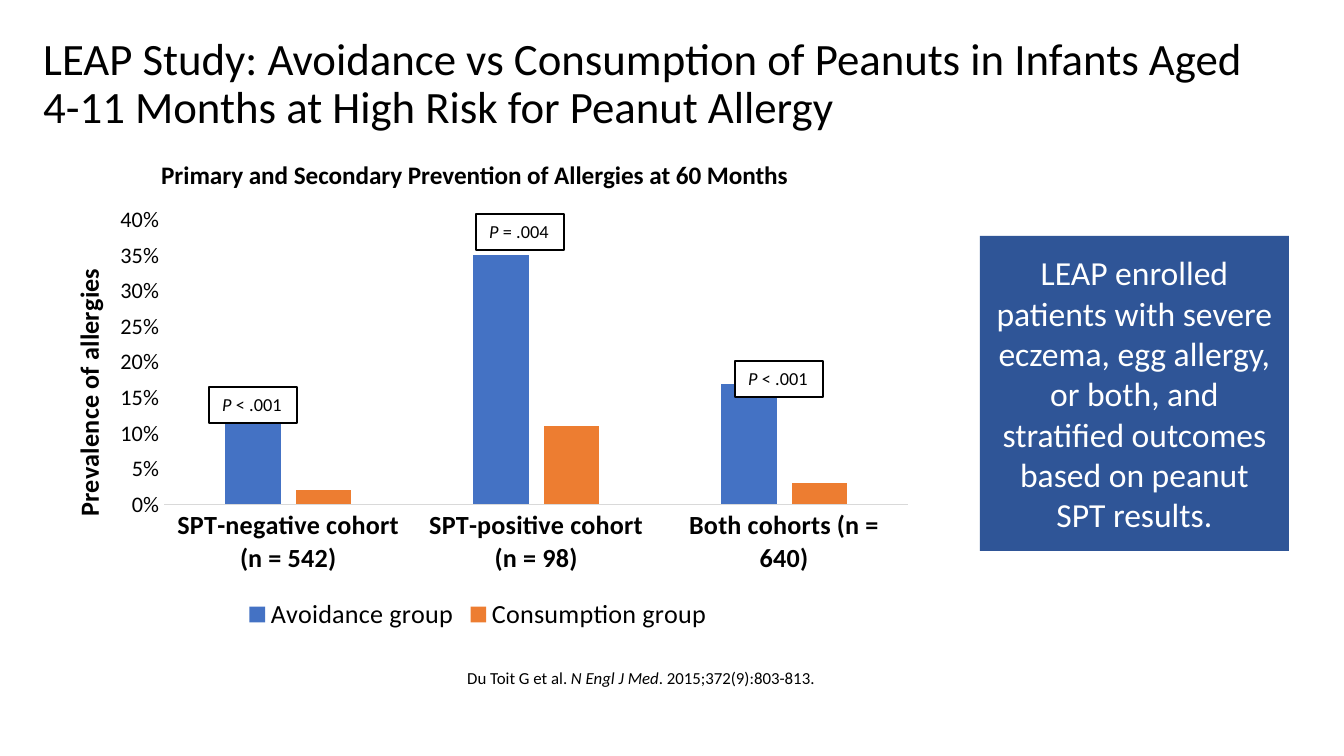
from lxml import etree
from pptx import Presentation
from pptx.chart.data import CategoryChartData
from pptx.dml.color import RGBColor
from pptx.enum.chart import XL_CHART_TYPE, XL_LEGEND_POSITION, XL_TICK_MARK
from pptx.enum.shapes import MSO_SHAPE
from pptx.enum.text import MSO_ANCHOR, PP_ALIGN
from pptx.oxml.ns import qn
from pptx.util import Pt

COLUMNS = XL_CHART_TYPE.COLUMN_CLUSTERED
LEGEND_BOTTOM = XL_LEGEND_POSITION.BOTTOM
NO_TICKS = XL_TICK_MARK.NONE
RECTANGLE = MSO_SHAPE.RECTANGLE
TOP, MIDDLE = MSO_ANCHOR.TOP, MSO_ANCHOR.MIDDLE
LEFT, CENTER = PP_ALIGN.LEFT, PP_ALIGN.CENTER

EMU_PER_PX = 914400 / 134.4
BLACK, WHITE, NAVY, GRAY = "000000", "FFFFFF", "2F5597", "D9D9D9"


def px(*lengths):
    return [round(length * EMU_PER_PX) for length in lengths]


def color(value):
    return RGBColor.from_string(value)


def style_font(font, size, ink=BLACK, bold=False, italic=False):
    font.name = "Calibri"
    font.size = Pt(size)
    font.bold = bold
    font.italic = italic
    font.color.rgb = color(ink)


def write(frame, text, size, ink=BLACK, bold=False, align=LEFT,
          anchor=TOP, wrap=True, spacing=1.0):
    """Fill a text frame; parts between asterisks are italic."""
    frame.word_wrap = wrap
    frame.vertical_anchor = anchor
    paragraph = frame.paragraphs[0]
    paragraph.alignment = align
    paragraph.line_spacing = spacing
    for index, part in enumerate(text.split("*")):
        for line_number, line in enumerate(part.split("\n")):
            if line_number:
                paragraph.add_line_break()
            if line:
                run = paragraph.add_run()
                run.text = line
                style_font(run.font, size, ink, bold, italic=index % 2 == 1)


def place(element, inner=False, **fractions):
    """Give a chart part a manual layout in fractions of the chart."""
    layout = element.find(qn("c:layout"))
    if layout is None:
        layout = etree.Element(qn("c:layout"))
        text = element.find(qn("c:tx"))
        element.insert(0 if text is None else element.index(text) + 1, layout)
    for child in list(layout):
        layout.remove(child)
    manual = etree.SubElement(layout, qn("c:manualLayout"))
    settings = {"layoutTarget": "inner"} if inner else {}
    settings.update(xMode="edge", yMode="edge", **fractions)
    for name, value in settings.items():
        etree.SubElement(manual, qn(f"c:{name}")).set("val", str(value))


class SlideBuilder:
    def __init__(self, presentation):
        self.slide = presentation.slides.add_slide(presentation.slide_layouts[6])

    def text(self, box, text, size, **format):
        shape = self.slide.shapes.add_textbox(*px(*box))
        write(shape.text_frame, text, size, **format)

    def rectangle(self, box, text, size, fill, line=None, **format):
        shape = self.slide.shapes.add_shape(RECTANGLE, *px(*box))
        shape.shadow.inherit = False
        shape.fill.solid()
        shape.fill.fore_color.rgb = color(fill)
        if line:
            shape.line.color.rgb = color(line)
            shape.line.width = Pt(0.75)
        else:
            shape.line.fill.background()
        write(shape.text_frame, text, size, **format)

    def column_chart(self, box, categories, series, axis_title):
        data = CategoryChartData(number_format="0%")
        data.categories = categories
        for name, values, _ in series:
            data.add_series(name, values)
        chart = self.slide.shapes.add_chart(COLUMNS, *px(*box), data).chart
        style_font(chart.font, 10)
        chart.has_title = False

        # Columns
        plot = chart.plots[0]
        plot.gap_width, plot.overlap = 219, -27
        plot.vary_by_categories = False
        for columns, (_, _, fill) in zip(plot.series, series):
            columns.format.fill.solid()
            columns.format.fill.fore_color.rgb = color(fill)
        plot_area = chart._chartSpace.chart.plotArea
        place(plot_area, inner=True, x=0.15, y=0.05, w=0.83, h=0.65)

        # Axes
        category_axis, value_axis = chart.category_axis, chart.value_axis
        for axis in (category_axis, value_axis):
            axis.has_major_gridlines = False
            axis.major_tick_mark = axis.minor_tick_mark = NO_TICKS
        style_font(category_axis.tick_labels.font, 14, bold=True)
        category_axis.format.line.color.rgb = color(GRAY)
        category_axis.format.line.width = Pt(0.75)
        style_font(value_axis.tick_labels.font, 11.9)
        value_axis.format.line.fill.background()
        value_axis.minimum_scale, value_axis.maximum_scale = 0, 0.4
        value_axis.major_unit = 0.05
        value_axis.tick_labels.number_format = "0%"
        value_axis.tick_labels.number_format_is_linked = False
        title = value_axis.axis_title
        run = title.text_frame.paragraphs[0].add_run()
        run.text = axis_title
        style_font(run.font, 14, bold=True)
        place(title._element, x=0.04, y=0.15)

        # Legend
        chart.has_legend = True
        chart.legend.position = LEGEND_BOTTOM
        chart.legend.include_in_layout = False
        style_font(chart.legend.font, 14)


def main():
    presentation = Presentation()
    presentation.slide_width, presentation.slide_height = px(1344, 756)
    builder = SlideBuilder(presentation)

    # Title and citation
    builder.text((30, 12, 1298, 146),
                 "LEAP Study: Avoidance vs Consumption of Peanuts in Infants Aged\n"
                 "4-11 Months at High Risk for Peanut Allergy",
                 24, anchor=MIDDLE, spacing=0.9)
    builder.text((454, 663, 890, 81),
                 "Du Toit G et al. *N Engl J Med*. 2015;372(9):803-813.",
                 9, spacing=0.9)

    # Chart with its heading
    builder.column_chart(
        (30, 198, 896, 438),
        ["SPT-negative cohort (n = 542)",
         "SPT-positive cohort (n = 98)",
         "Both cohorts (n = 640)"],
        [("Avoidance group", (0.14, 0.35, 0.17), "4472C4"),
         ("Consumption group", (0.02, 0.11, 0.03), "ED7D31")],
        "Prevalence of allergies")
    builder.text((148, 153, 661, 44),
                 "Primary and Secondary Prevention of Allergies at 60 Months",
                 13.5, bold=True, wrap=False)

    # P values above the columns
    for left, top, label in ((209, 387, "*P* < .001"),
                             (476, 214, "*P* = .004"),
                             (735, 361, "*P* < .001")):
        builder.rectangle((left, top, 88, 36), label, 9.8, WHITE,
                          line=BLACK, wrap=False)

    # Summary panel
    builder.rectangle((980, 236, 309, 315),
                      "LEAP enrolled patients with severe eczema, egg allergy, "
                      "or both, and stratified outcomes based on peanut SPT results.",
                      18, NAVY, ink=WHITE, align=CENTER, anchor=MIDDLE)

    presentation.save("out.pptx")


if __name__ == "__main__":
    main()
